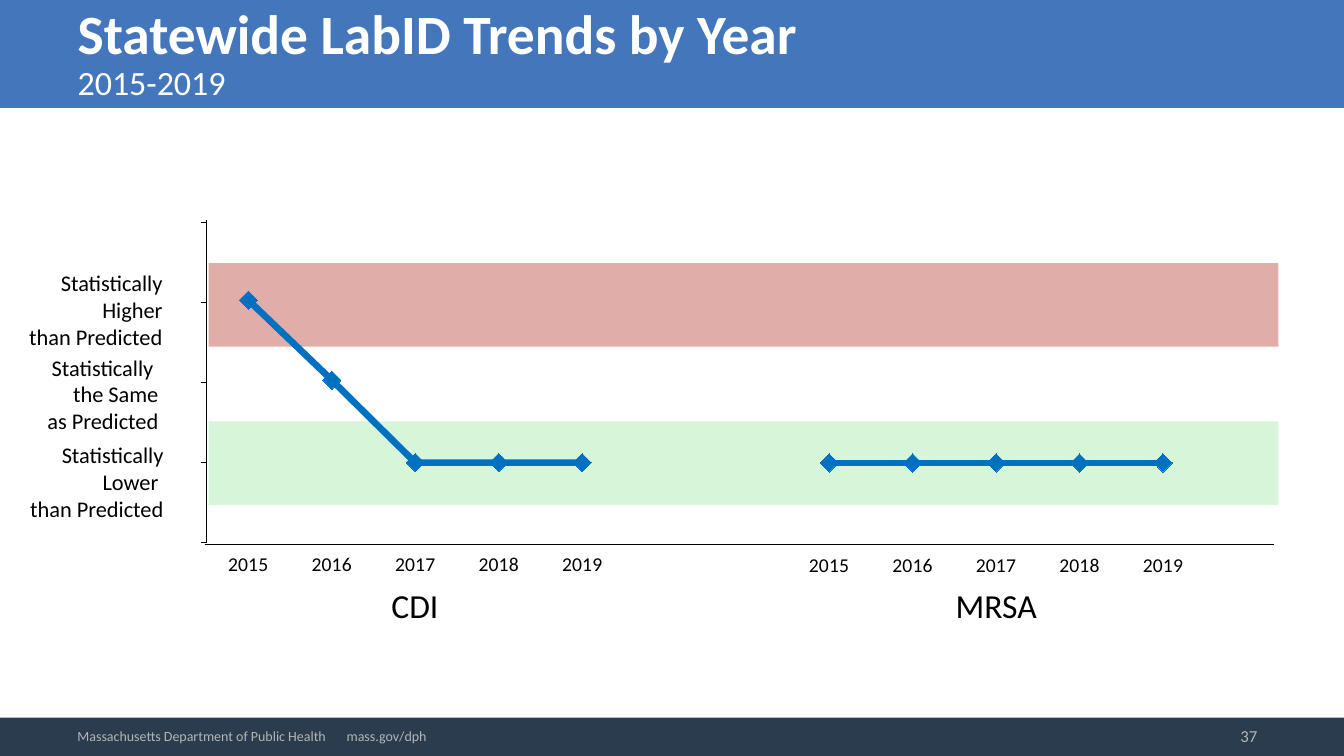
from lxml import etree
from pptx import Presentation
from pptx.chart.data import CategoryChartData
from pptx.dml.color import RGBColor
from pptx.enum.chart import XL_CHART_TYPE, XL_MARKER_STYLE, XL_TICK_LABEL_POSITION, XL_TICK_MARK
from pptx.enum.shapes import MSO_CONNECTOR, MSO_SHAPE
from pptx.enum.text import MSO_ANCHOR, MSO_AUTO_SIZE, PP_ALIGN
from pptx.oxml import parse_xml
from pptx.oxml.ns import qn
from pptx.util import Inches, Pt

LINE_MARKERS = XL_CHART_TYPE.LINE_MARKERS
DIAMOND = XL_MARKER_STYLE.DIAMOND
NO_LABELS = XL_TICK_LABEL_POSITION.NONE
TICK_OUT, TICK_NONE = XL_TICK_MARK.OUTSIDE, XL_TICK_MARK.NONE
RECTANGLE = MSO_SHAPE.RECTANGLE
STRAIGHT = MSO_CONNECTOR.STRAIGHT
LEFT, CENTER, RIGHT = PP_ALIGN.LEFT, PP_ALIGN.CENTER, PP_ALIGN.RIGHT
TOP, MIDDLE = MSO_ANCHOR.TOP, MSO_ANCHOR.MIDDLE
NO_AUTOSIZE = MSO_AUTO_SIZE.NONE

COLORS = {
    "header": "4376BB", "footer": "2A3C4E", "footer_text": "B5B5B5",
    "higher": "E1ADA9", "lower": "D7F5D8", "trend": "0070C0",
    "white": "FFFFFF", "black": "000000",
}
YEARS = ["2015", "2016", "2017", "2018", "2019"]
CHART_NS = "http://schemas.openxmlformats.org/drawingml/2006/chart"


def color(name):
    return RGBColor.from_string(COLORS[name])


class TrendSlide:
    font_name = "Calibri"

    def __init__(self, presentation):
        self.slide = presentation.slides.add_slide(presentation.slide_layouts[5])
        self.shapes = self.slide.shapes

    def style(self, font, size, color_name, bold=False):
        font.name, font.size, font.bold = self.font_name, Pt(size), bold
        font.color.rgb = color(color_name)

    def band(self, left, top, width, height, color_name):
        shape = self.shapes.add_shape(
            RECTANGLE, Inches(left), Inches(top), Inches(width), Inches(height))
        shape.shadow.inherit = False
        shape.fill.solid()
        shape.fill.fore_color.rgb = color(color_name)
        shape.line.fill.background()

    def title(self, heading, subheading):
        title = self.shapes.title
        title.left, title.top = Inches(0.67), Inches(0.16)
        title.width, title.height = Inches(12.67), Inches(0.77)
        # Bring the title in front of the header band.
        self.shapes.element.append(title.element)
        frame = title.text_frame
        frame.auto_size, frame.vertical_anchor = NO_AUTOSIZE, MIDDLE
        paragraph = frame.paragraphs[0]
        paragraph.alignment, paragraph.line_spacing = LEFT, 0.9
        self.style(paragraph.font, 39.6, "white", bold=True)
        paragraph.add_run().text = heading
        paragraph.add_line_break()
        run = paragraph.add_run()
        run.text = subheading
        run.font.size, run.font.bold = Pt(24.3), False

    def text(self, left, top, width, height, lines, size,
             color_name="black", align=LEFT, anchor=TOP, tab=None):
        box = self.shapes.add_textbox(
            Inches(left), Inches(top), Inches(width), Inches(height))
        frame = box.text_frame
        frame.word_wrap, frame.vertical_anchor = True, anchor
        frame.text = "\n".join(lines)
        for paragraph in frame.paragraphs:
            paragraph.alignment = align
            if tab:
                properties = paragraph._p.get_or_add_pPr()
                tabs = etree.SubElement(properties, qn("a:tabLst"))
                etree.SubElement(tabs, qn("a:tab"), pos=str(Inches(tab)), algn="l")
            self.style(paragraph.font, size, color_name)

    def line(self, left, right, y):
        connector = self.shapes.add_connector(
            STRAIGHT, Inches(left), Inches(y), Inches(right), Inches(y))
        connector.line.color.rgb = color("black")
        connector.line.width = Pt(0.75)
        etree.SubElement(connector._element.spPr, qn("a:effectLst"))

    def chart(self, left, top, values, maximum, major_unit, show_value_axis):
        data = CategoryChartData()
        data.categories = YEARS
        data.add_series("Series 1", values)
        chart = self.shapes.add_chart(
            LINE_MARKERS, Inches(left), Inches(top), Inches(4.6), Inches(3.56), data).chart
        chart.has_legend = chart.has_title = False
        self.style(chart.font, 14, "black")

        category_axis, value_axis = chart.category_axis, chart.value_axis
        category_axis.format.line.fill.background()
        category_axis.major_tick_mark = TICK_OUT
        value_axis.minimum_scale, value_axis.maximum_scale = 0, maximum
        value_axis.major_unit = major_unit
        value_axis.has_major_gridlines = False
        value_axis.tick_label_position = NO_LABELS
        value_axis.major_tick_mark = TICK_OUT if show_value_axis else TICK_NONE
        if show_value_axis:
            value_axis.format.line.color.rgb = color("black")
            value_axis.format.line.width = Pt(0.6)
        else:
            value_axis.format.line.fill.background()

        series = chart.plots[0].series[0]
        series.smooth = False
        series.format.line.color.rgb = color("trend")
        series.format.line.width = Pt(4.75)
        marker = series.marker
        marker.style, marker.size = DIAMOND, 13
        marker.format.fill.solid()
        marker.format.fill.fore_color.rgb = color("trend")
        marker.format.line.color.rgb = color("trend")
        self.place_plot(chart, x=0.052, y=0, w=0.9, h=0.9)

    def place_plot(self, chart, **fractions):
        """Fix the inner plot area as fractions of the chart frame."""
        plot_area = chart._chartSpace.chart.plotArea
        for layout in plot_area.findall(qn("c:layout")):
            plot_area.remove(layout)
        sizes = "".join(f'<c:{key} val="{value}"/>' for key, value in fractions.items())
        plot_area.insert(0, parse_xml(
            f'<c:layout xmlns:c="{CHART_NS}"><c:manualLayout><c:layoutTarget val="inner"/>'
            f'<c:xMode val="edge"/><c:yMode val="edge"/>{sizes}'
            '</c:manualLayout></c:layout>'))


def main():
    presentation = Presentation()
    presentation.slide_width, presentation.slide_height = Inches(13.33), Inches(7.5)
    slide = TrendSlide(presentation)

    slide.band(0, 0, 13.33, 1.07, "header")
    slide.band(0, 7.12, 13.33, 0.38, "footer")
    slide.band(2.07, 2.61, 10.61, 0.83, "higher")
    slide.band(2.07, 4.18, 10.61, 0.83, "lower")
    slide.title("Statewide LabID Trends by Year", "2015-2019")

    slide.chart(1.81, 2.18, [100, 67, 33, 33, 33], 133, 33, True)
    slide.chart(7.57, 2.19, [100] * 5, 400, 100, False)
    slide.line(2.03, 12.64, 5.4)

    for top, width, height, lines in [
        (2.62, 1.65, 0.72, ["Statistically Higher", "than Predicted"]),
        (3.46, 1.61, 0.65, ["Statistically ", "the Same", "as Predicted"]),
        (4.33, 1.66, 0.52, ["Statistically Lower ", "than Predicted"]),
    ]:
        slide.text(0.06, top, width, height, lines, 16, align=RIGHT)
    for left, width, name in [(2.97, 2.29, "CDI"), (8.82, 2.12, "MRSA")]:
        slide.text(left, 5.75, width, 0.5, [name], 24, align=CENTER)

    slide.text(9.58, 7.1, 2.99, 0.4, ["37"], 12, "footer_text", RIGHT, MIDDLE)
    slide.text(0.67, 7.12, 4.17, 0.37,
               ["Massachusetts Department of Public Health\tmass.gov/dph"],
               10, "footer_text", anchor=MIDDLE, tab=2.67)

    presentation.save("out.pptx")


if __name__ == "__main__":
    main()
